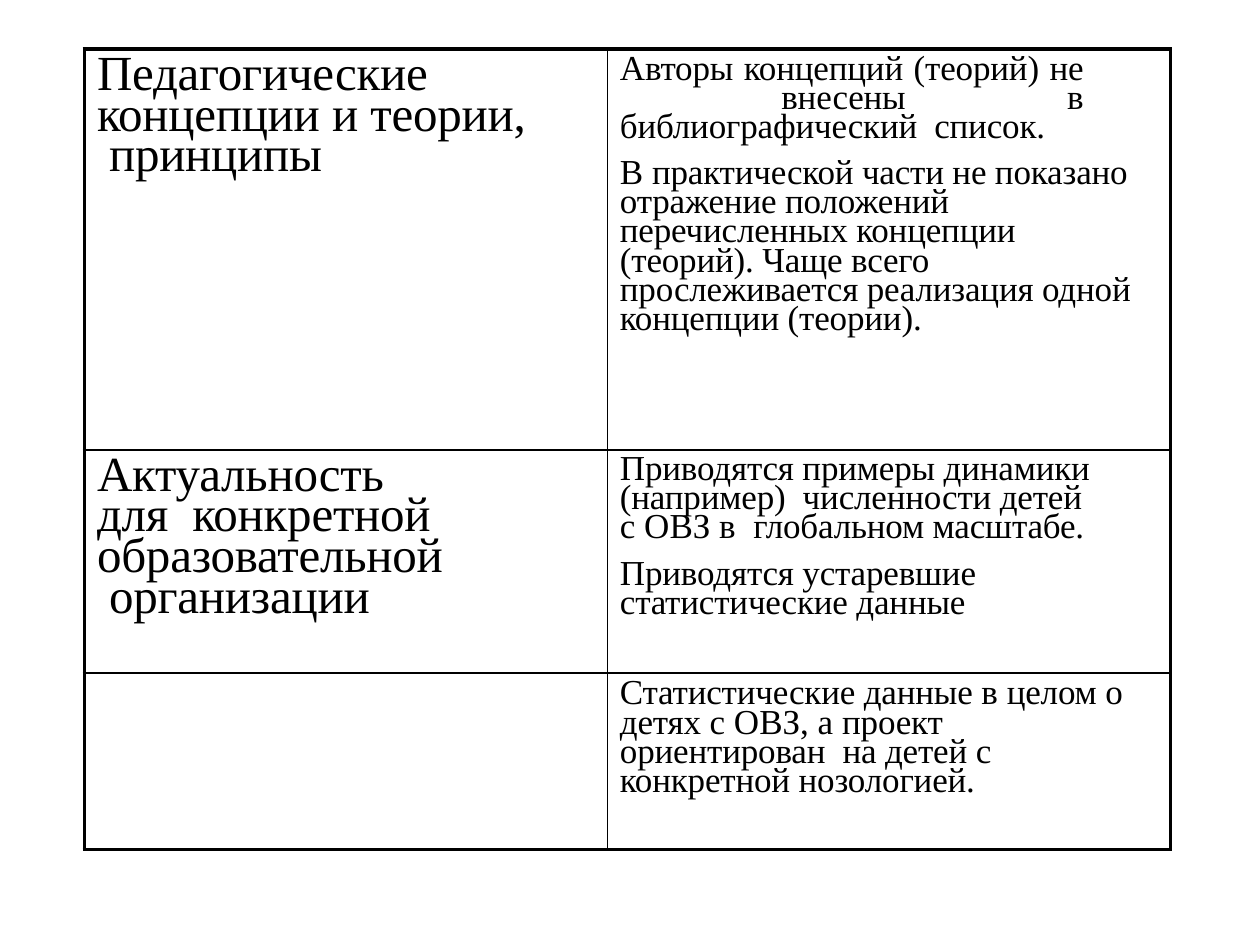
from lxml import etree
from pptx import Presentation
from pptx import util as u
from pptx.dml.color import RGBColor
from pptx.enum import text
from pptx.oxml import ns

BLACK = RGBColor(0, 0, 0)
THICK, THIN = 2.25, 1
COLUMNS = (4.15, 4.47)
ROWS = (3.18, 1.77, 1.4)
LEFT = text.PP_ALIGN.LEFT
JUSTIFY = text.PP_ALIGN.JUSTIFY

# Each paragraph: size, space before, right margin, alignment, text ("|" toggles tight spacing).
CELLS = (
    (
        [(28, 5, 0, LEFT, "Педагогические  концепции |и |теории,\n принципы")],
        [
            (20, 4.5, 0.69, JUSTIFY,
             "Авторы концепций (теорий) не\n внесены |в |библиографический  список."),
            (20, 9.9, 0.2, LEFT,
             "|В |практической части не показано  отражение положений  "
             "перечисленных концепции  (теорий). Чаще всего  "
             "прослеживается реализация одной  концепции (теории)."),
        ],
    ),
    (
        [(28, 5, 1.22, LEFT, "Актуальность для  конкретной  образовательной  организации")],
        [
            (20, 4.5, 0.55, LEFT,
             "Приводятся примеры динамики (например)  численности детей "
             "|с ОВЗ в  |глобальном масштабе."),
            (20, 9.9, 0.2, LEFT, "Приводятся устаревшие  статистические данные"),
        ],
    ),
    (
        [],
        [(20, 5, 0.2, LEFT,
          "Статистические данные |в |целом |о  |детях |с ОВЗ, а "
          "|проект ориентирован  на детей |с |конкретной нозологией.")],
    ),
)


class TableSlide:
    """Holds the text style and the current page, and draws tables on it."""

    def __init__(self, deck):
        self.page = deck.slides.add_slide(deck.slide_layouts[6])
        self.font_name = "Times New Roman"
        self.indent = 0.1
        self.leading = 0.75
        self.tracking = -10

    def table(self, left, top, columns, rows, cells):
        frame = self.page.shapes.add_table(
            len(rows), len(columns), u.Inches(left), u.Inches(top),
            u.Inches(sum(columns)), u.Inches(sum(rows)))
        table = frame.table
        table.first_row = table.horz_banding = False
        for column, width in zip(table.columns, columns):
            column.width = u.Inches(width)
        for row, height in zip(table.rows, rows):
            row.height = u.Inches(height)
        for r, row_cells in enumerate(cells):
            for c, paragraphs in enumerate(row_cells):
                cell = table.cell(r, c)
                edges = {"L": c == 0, "R": c == len(columns) - 1,
                         "T": r == 0, "B": r == len(rows) - 1}
                self.borders(cell, edges)
                cell.fill.background()
                self.cell_text(cell, paragraphs)

    def borders(self, cell, edges):
        properties = cell._tc.get_or_add_tcPr()
        for side, outer in edges.items():
            line = etree.SubElement(properties, ns.qn(f"a:ln{side}"))
            line.set("w", str(u.Pt(THICK if outer else THIN)))
            fill = etree.SubElement(line, ns.qn("a:solidFill"))
            etree.SubElement(fill, ns.qn("a:srgbClr")).set("val", str(BLACK))

    def cell_text(self, cell, paragraphs):
        margins = {"margin_left": 0, "margin_right": 0, "margin_bottom": 0,
                   "margin_top": u.Inches(0.06)}
        if len(paragraphs) == 1:
            margins["margin_top"] = u.Inches(0.07)
        for name, value in margins.items():
            setattr(cell, name, value)
        for index, item in enumerate(paragraphs):
            box = cell.text_frame
            para = box.add_paragraph() if index else box.paragraphs[0]
            self.paragraph(para, *item)

    def paragraph(self, para, size, before, right, align, words):
        layout = {"alignment": align, "line_spacing": self.leading,
                  "space_before": u.Pt(before)}
        for name, value in layout.items():
            setattr(para, name, value)
        properties = para._p.get_or_add_pPr()
        margins = {"marL": self.indent, "marR": right, "indent": 0}
        for name, value in margins.items():
            properties.set(name, str(u.Inches(value)))
        for index, piece in enumerate(words.split("|")):
            for number, line in enumerate(piece.split("\n")):
                if number:
                    para.add_line_break()
                if line:
                    self.span(para, line, size, 0 if index % 2 else self.tracking)

    def span(self, para, words, size, tracking):
        span = para.add_run()
        span.text = words
        for name, value in {"name": self.font_name, "size": u.Pt(size)}.items():
            setattr(span.font, name, value)
        span.font.color.rgb = BLACK
        span._r.get_or_add_rPr().set("spc", str(tracking))


def main():
    deck = Presentation()
    deck.slide_width, deck.slide_height = u.Inches(10), u.Inches(7.5)
    TableSlide(deck).table(0.67, 0.39, COLUMNS, ROWS, CELLS)
    deck.save("out.pptx")


if __name__ == "__main__":
    main()
